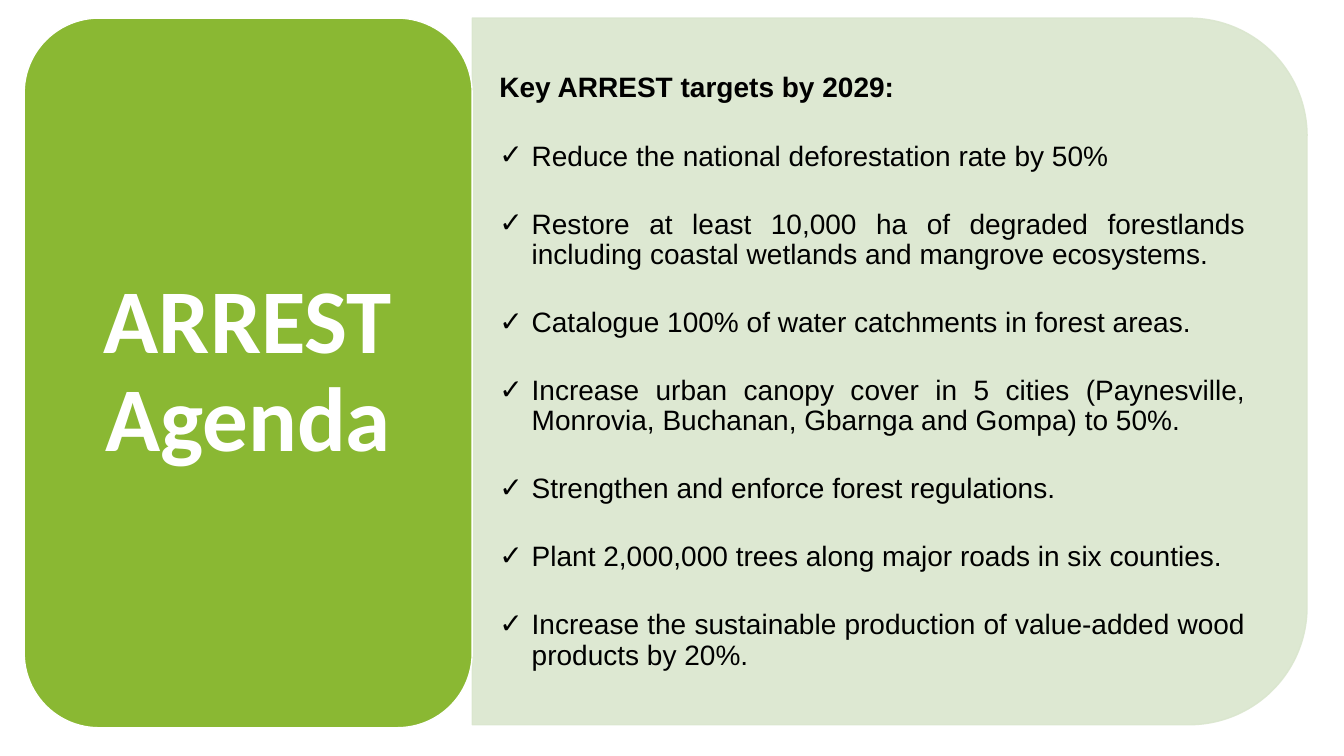
"""Build the ARREST Agenda slide: a title card beside a panel of targets."""
import pptx
import pptx.util
import pptx.dml.color
import pptx.enum.shapes
import pptx.enum.text
import pptx.oxml
import pptx.oxml.ns

Inches, Pt = pptx.util.Inches, pptx.util.Pt
RGBColor = pptx.dml.color.RGBColor
SHAPE = pptx.enum.shapes.MSO_SHAPE
ALIGN = pptx.enum.text.PP_ALIGN
MIDDLE = pptx.enum.text.MSO_ANCHOR.MIDDLE

TITLE = "ARREST Agenda"
HEAD = "Key ARREST targets by 2029:"
GOALS = [
    "Reduce the national deforestation rate by 50%",
    "Restore at least 10,000 ha of degraded forestlands including coastal wetlands and mangrove ecosystems.",
    "Catalogue 100% of water catchments in forest areas.",
    "Increase urban canopy cover in 5 cities (Paynesville, Monrovia, Buchanan, Gbarnga and Gompa) to 50%.",
    "Strengthen and enforce forest regulations.",
    "Plant 2,000,000 trees along major roads in six counties.",
    "Increase the sustainable production of value-added wood products by 20%.",
]

GREEN = RGBColor(0x8A, 0xB8, 0x33)
PALE = RGBColor(0xDA, 0xE6, 0xCE)
WHITE = RGBColor(0xFF, 0xFF, 0xFF)
BLACK = RGBColor(0, 0, 0)

WIDE, HIGH = 13.33, 7.5
LEFT, TOP = 0.24, 0.18
CARD = WIDE / 3
SPLIT = LEFT + CARD
PANEL, TALL = 8.28, 7.01
INDENT = 0.32


def element(tag, **attrs):
    node = pptx.oxml.parse_xml(f"<a:{tag} {pptx.oxml.ns.nsdecls('a')}/>")
    for name, value in attrs.items():
        node.set(name, value)
    return node


def paint(shape, fill, line):
    shape.shadow.inherit = False
    shape.fill.solid()
    shape.fill.fore_color.rgb = fill
    shape.line.color.rgb = line
    shape.line.width = Pt(1)


def frame(shape):
    text = shape.text_frame
    text.word_wrap = True
    text.vertical_anchor = MIDDLE
    text.margin_left = text.margin_right = Inches(0.27)
    text.margin_top = text.margin_bottom = Inches(0.14)
    return text


def write(par, words, face, size, color, align, bold):
    par.text = words
    par.alignment = align
    par.line_spacing = 0.9
    font = par.font
    font.name, font.size, font.bold = face, Pt(size), bold
    font.color.rgb = color


def add_panel(shapes):
    mid = SPLIT + PANEL / 2
    panel = shapes.add_shape(
        SHAPE.ROUND_2_SAME_RECTANGLE, Inches(mid - TALL / 2),
        Inches(TOP + TALL / 2 - PANEL / 2), Inches(TALL), Inches(PANEL))
    panel.rotation = 90
    paint(panel, PALE, PALE)
    for color in panel._element.spPr.iter(pptx.oxml.ns.qn("a:srgbClr")):
        color.append(element("alpha", val="90000"))


def add_goals(shapes):
    box = shapes.add_textbox(Inches(SPLIT), Inches(0.53), Inches(7.94), Inches(6.33))
    text = frame(box)
    for i, words in enumerate([HEAD] + GOALS):
        par = text.add_paragraph() if i else text.paragraphs[0]
        if i:
            props = par._p.get_or_add_pPr()
            props.set("marL", str(Inches(INDENT)))
            props.set("indent", str(-Inches(INDENT)))
            props.append(element("buFont", typeface="Arial"))
            props.append(element("buChar", char="✓"))
        write(par, words, "Arial", 20, BLACK, ALIGN.JUSTIFY, i == 0)
        if i < len(GOALS):
            par.space_after = Pt(27)


def add_card(shapes):
    card = shapes.add_shape(SHAPE.ROUNDED_RECTANGLE, Inches(LEFT), Inches(TOP),
                            Inches(CARD), Inches(7.04))
    paint(card, GREEN, WHITE)
    write(frame(card).paragraphs[0], TITLE, "Calibri", 65, WHITE, ALIGN.CENTER, True)


def main():
    deck = pptx.Presentation()
    deck.slide_width, deck.slide_height = Inches(WIDE), Inches(HIGH)
    shapes = deck.slides.add_slide(deck.slide_layouts[6]).shapes
    add_panel(shapes)
    add_goals(shapes)
    add_card(shapes)
    deck.save("out.pptx")


if __name__ == "__main__":
    main()
